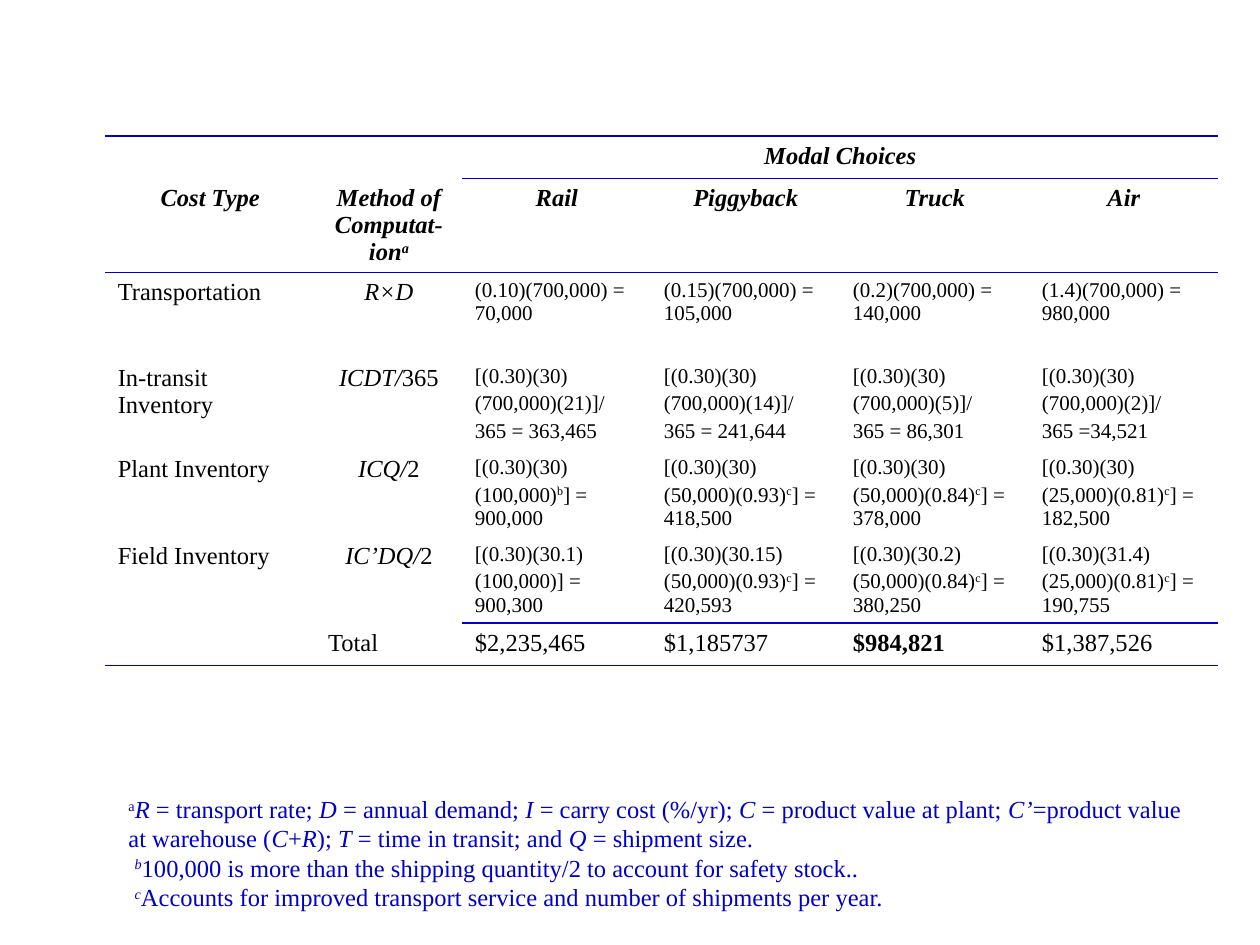
import pptx
import pptx.util
import pptx.dml.color
import pptx.enum.text
import pptx.oxml.ns
import lxml.etree

Cm, Pt = pptx.util.Cm, pptx.util.Pt
ALIGN = pptx.enum.text.PP_ALIGN
BLACK = pptx.dml.color.RGBColor(0x00, 0x00, 0x00)
BLUE = pptx.dml.color.RGBColor(0x00, 0x00, 0xCC)
FONT = "Times New Roman"

COLUMN_WIDTHS = [4.24, 2.96, 3.81, 3.81, 3.81, 3.81]
ROW_HEIGHTS = [0.85, 1.9, 1.73, 1.83, 1.75, 1.75, 0.8]
HEADER_ROWS = 2
TOTAL_ROW = 6
FIRST_MODE = 2
BEST_TOTAL = (6, 4)

# Horizontal rules: row boundary -> first column that the rule covers
RULES = {0: 0, 1: FIRST_MODE, 2: 0, 6: FIRST_MODE, 7: 0}

# In all texts, *...* marks italics and ^...^ marks superscript
CELLS = [
    ["", "", "Modal Choices", "", "", ""],
    ["Cost Type", "Method of Computat-ion^a^", "Rail", "Piggyback", "Truck", "Air"],
    ["Transportation", "*R×D*", "(0.10)(700,000) = 70,000", "(0.15)(700,000) = 105,000",
     "(0.2)(700,000) = 140,000", "(1.4)(700,000) = 980,000"],
    ["In-transit Inventory", "*ICDT/*365",
     "[(0.30)(30)\n(700,000)(21)]/\n365 = 363,465",
     "[(0.30)(30)\n(700,000)(14)]/\n365 = 241,644",
     "[(0.30)(30)\n(700,000)(5)]/\n365 = 86,301",
     "[(0.30)(30)\n(700,000)(2)]/\n365 =34,521"],
    ["Plant Inventory", "*ICQ/*2",
     "[(0.30)(30)\n(100,000)^b^] = 900,000",
     "[(0.30)(30)\n(50,000)(0.93)^c^] = 418,500",
     "[(0.30)(30)\n(50,000)(0.84)^c^] = 378,000",
     "[(0.30)(30)\n(25,000)(0.81)^c^] = 182,500"],
    ["Field Inventory", "*IC’DQ/*2",
     "[(0.30)(30.1)\n(100,000)] = 900,300",
     "[(0.30)(30.15)\n(50,000)(0.93)^c^] = 420,593",
     "[(0.30)(30.2)\n(50,000)(0.84)^c^] = 380,250",
     "[(0.30)(31.4)\n(25,000)(0.81)^c^] = 190,755"],
    ["", "Total", "$2,235,465", "$1,185737", "$984,821", "$1,387,526"],
]

FOOTNOTES = (
    "^a^*R* = transport rate; *D* = annual demand; *I* = carry cost (%/yr); "
    "*C* = product value at plant; *C’*=product value at warehouse (*C*+*R*); "
    "*T* = time in transit; and *Q* = shipment size.\n"
    " *^b^*100,000 is more than the shipping quantity/2 to account for safety stock..\n"
    " *^c^*Accounts for improved transport service and number of shipments per year."
)


def write_text(frame, text, size=14, color=BLACK, bold=False, italic=False,
               align=ALIGN.LEFT, gap=0, line_spacing=None):
    """Fill a text frame, one paragraph a line, reading the * and ^ marks."""
    for number, line in enumerate(text.split("\n")):
        para = frame.add_paragraph() if number else frame.paragraphs[0]
        para.alignment = align
        if number and gap:
            para.space_before = Pt(gap)
        if line_spacing:
            para.line_spacing = Pt(line_spacing)
        for i, stretch in enumerate(line.split("*")):
            for j, piece in enumerate(stretch.split("^")):
                if not piece:
                    continue
                span = para.add_run()
                span.text = piece
                span.font.name = FONT
                span.font.size = Pt(size)
                span.font.bold = bold
                span.font.italic = italic or i % 2 == 1
                span.font.color.rgb = color
                if j % 2:
                    span.font._element.set("baseline", "30000")
        # Keeps empty cells from growing their row
        para._p.get_or_add_endParaRPr().set("sz", str(size * 100))


def set_borders(cell, top, bottom):
    """Draw the top and bottom edges that are wanted and hide the others."""
    properties = cell._tc.get_or_add_tcPr()
    qn = pptx.oxml.ns.qn
    for edge, shown in (("L", False), ("R", False), ("T", top), ("B", bottom)):
        line = lxml.etree.SubElement(properties, qn("a:ln" + edge), w=str(Pt(1)))
        if shown:
            fill = lxml.etree.SubElement(line, qn("a:solidFill"))
            lxml.etree.SubElement(fill, qn("a:srgbClr"), val=str(BLUE))
        else:
            lxml.etree.SubElement(line, qn("a:noFill"))


def add_cost_table(page, left, top):
    table = page.shapes.add_table(
        len(ROW_HEIGHTS), len(COLUMN_WIDTHS), Cm(left), Cm(top),
        Cm(sum(COLUMN_WIDTHS)), Cm(sum(ROW_HEIGHTS))).table
    table.first_row = False
    table.horz_banding = False
    for column, width in zip(table.columns, COLUMN_WIDTHS):
        column.width = Cm(width)
    for row, height in zip(table.rows, ROW_HEIGHTS):
        row.height = Cm(height)
    table.cell(0, FIRST_MODE).merge(table.cell(0, len(COLUMN_WIDTHS) - 1))

    for r, texts in enumerate(CELLS):
        for c, text in enumerate(texts):
            cell = table.cell(r, c)
            header = r < HEADER_ROWS
            method = c == 1 and r != TOTAL_ROW
            formula = c >= FIRST_MODE and not header and r != TOTAL_ROW
            set_borders(cell, *(c >= RULES.get(edge, len(texts)) for edge in (r, r + 1)))
            cell.fill.background()
            write_text(cell.text_frame, text,
                       size=12 if formula else 14,
                       bold=header or (r, c) == BEST_TOTAL,
                       italic=header,
                       align=ALIGN.CENTER if header or method else ALIGN.LEFT,
                       gap=2.4)


def add_footnotes(page, left, top, width, height):
    box = page.shapes.add_textbox(Cm(left), Cm(top), Cm(width), Cm(height))
    box.text_frame.word_wrap = True
    write_text(box.text_frame, FOOTNOTES, color=BLUE, line_spacing=16.8)


def main():
    deck = pptx.Presentation()
    deck.slide_width, deck.slide_height = Cm(25.4), Cm(19.05)
    page = deck.slides.add_slide(deck.slide_layouts[6])
    add_cost_table(page, 2.12, 2.74)
    add_footnotes(page, 2.34, 15.88, 21.84, 2.62)
    deck.save("out.pptx")


if __name__ == "__main__":
    main()
